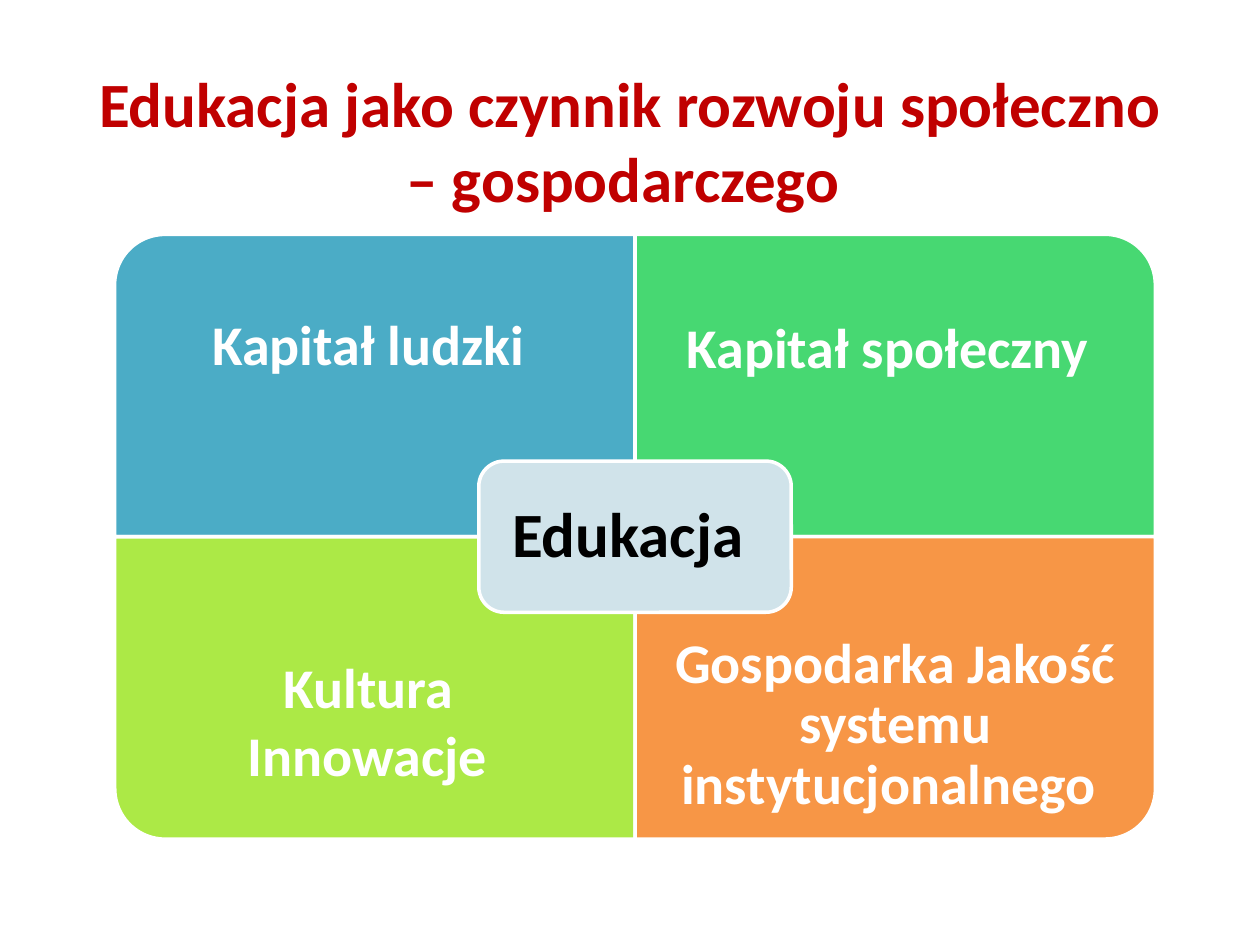
"""Build a slide showing education at the centre of four development factors."""
import pptx
import pptx.dml.color
import pptx.enum.shapes
import pptx.enum.text
import pptx.util

Inches = pptx.util.Inches
Pt = pptx.util.Pt
SHAPES = pptx.enum.shapes.MSO_SHAPE

TITLE = "Edukacja jako czynnik rozwoju społeczno – gospodarczego "
CENTRE = "Edukacja "
QUADRANTS = [
    {"row": 0, "column": 0, "rotation": 270, "fill": "4BACC6",
     "text": "Kapitał ludzki "},
    {"row": 0, "column": 1, "rotation": 0, "fill": "47D872",
     "text": "Kapitał społeczny", "tail": " "},
    {"row": 1, "column": 0, "rotation": 180, "fill": "ACE946",
     "text": "Kultura \nInnowacje", "tail": " "},
    {"row": 1, "column": 1, "rotation": 90, "fill": "F79646",
     "text": "Gospodarka Jakość systemu instytucjonalnego "},
]
LEFT, TOP = 0.91, 1.86
CELL_WIDTH, CELL_HEIGHT, LABEL_HEIGHT = 4.13, 2.4, 1.8
CENTRE_WIDTH, CENTRE_HEIGHT, CENTRE_INSET = 2.48, 1.2, 0.06


def colour(value):
    return pptx.dml.color.RGBColor.from_string(value)


def write(shape, text, size=32, color="FFFFFF", margin=0.25, spacing=0.9, tail=""):
    frame = shape.text_frame
    frame.word_wrap = True
    frame.auto_size = pptx.enum.text.MSO_AUTO_SIZE.NONE
    frame.vertical_anchor = pptx.enum.text.MSO_ANCHOR.MIDDLE
    if margin is not None:
        frame.margin_left = frame.margin_right = Inches(margin)
        frame.margin_top = frame.margin_bottom = Inches(margin)
    paragraph = frame.paragraphs[0]
    paragraph.alignment = pptx.enum.text.PP_ALIGN.CENTER
    paragraph.line_spacing = spacing
    for index, line in enumerate(text.split("\n")):
        if index:
            paragraph.add_line_break()
        paragraph.add_run().text = line
    if tail:
        paragraph.add_run().text = tail
    for run in paragraph.runs:
        run.font.name = "Calibri"
        run.font.size = Pt(size)
        run.font.bold = True
        run.font.color.rgb = colour(color)
    if tail:
        paragraph.runs[-1].font.size = Pt(37)
        paragraph.runs[-1].font.bold = False


def add_panel(slide, kind, left, top, width, height, fill, rotation=0):
    if rotation % 180:
        left += (width - height) / 2
        top += (height - width) / 2
        width, height = height, width
    shape = slide.shapes.add_shape(
        kind, Inches(left), Inches(top), Inches(width), Inches(height))
    shape.rotation = rotation
    shape.shadow.inherit = False
    shape.fill.solid()
    shape.fill.fore_color.rgb = colour(fill)
    shape.line.color.rgb = colour("FFFFFF")
    shape.line.width = Pt(2)


def add_label(slide, left, top, width, height, text, **style):
    box = slide.shapes.add_textbox(
        Inches(left), Inches(top), Inches(width), Inches(height))
    write(box, text, **style)


def main():
    presentation = pptx.Presentation()
    presentation.slide_width, presentation.slide_height = Inches(10), Inches(7.5)
    slide = presentation.slides.add_slide(presentation.slide_layouts[5])

    title = slide.shapes.title
    title.left, title.top = Inches(0.51), Inches(0.44)
    title.width, title.height = Inches(8.98), Inches(1.34)
    write(title, TITLE, size=36, color="C00000", margin=None, spacing=1.0)

    for quadrant in QUADRANTS:
        left = LEFT + quadrant["column"] * CELL_WIDTH
        top = TOP + quadrant["row"] * CELL_HEIGHT
        add_panel(slide, SHAPES.ROUND_1_RECTANGLE, left, top, CELL_WIDTH,
                  CELL_HEIGHT, quadrant["fill"], quadrant["rotation"])
        label_top = top + quadrant["row"] * (CELL_HEIGHT - LABEL_HEIGHT)
        add_label(slide, left, label_top, CELL_WIDTH, LABEL_HEIGHT,
                  quadrant["text"], tail=quadrant.get("tail", ""))

    left = LEFT + CELL_WIDTH - CENTRE_WIDTH / 2
    top = TOP + CELL_HEIGHT - CENTRE_HEIGHT / 2
    add_panel(slide, SHAPES.ROUNDED_RECTANGLE, left, top, CENTRE_WIDTH,
              CENTRE_HEIGHT, "D0E3EA")
    add_label(slide, left + CENTRE_INSET, top + CENTRE_INSET,
              CENTRE_WIDTH - 2 * CENTRE_INSET, CENTRE_HEIGHT - 2 * CENTRE_INSET,
              CENTRE, size=36, color="000000", margin=0.15)

    presentation.save("out.pptx")


if __name__ == "__main__":
    main()
